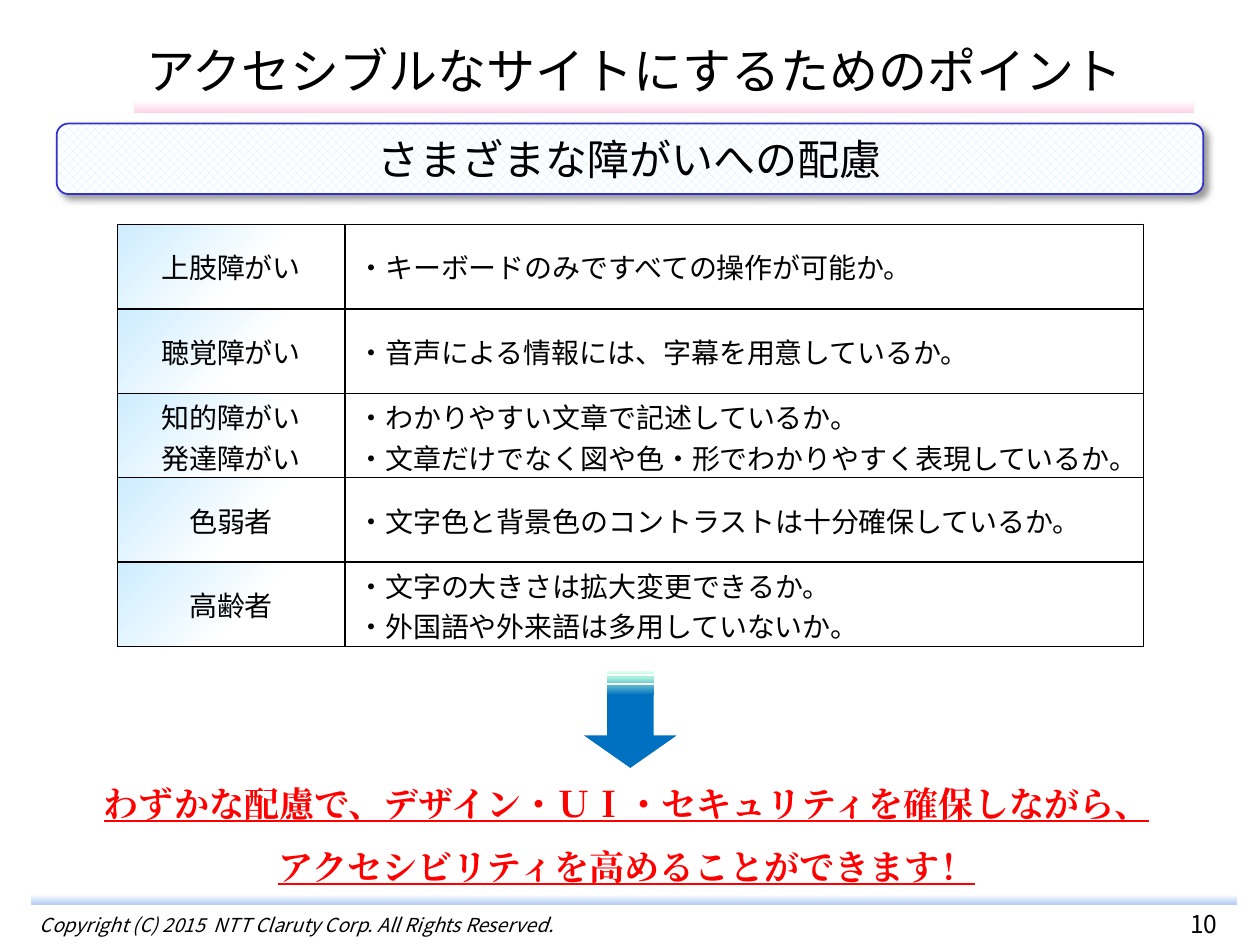
from dataclasses import dataclass
from typing import NamedTuple

from lxml.etree import SubElement
from pptx import Presentation
from pptx.dml.color import RGBColor as RGB
from pptx.enum.dml import MSO_PATTERN as Pattern
from pptx.enum.shapes import MSO_SHAPE as Shape
from pptx.enum.text import MSO_ANCHOR as Anchor, PP_ALIGN as Align
from pptx.oxml import parse_xml
from pptx.oxml.ns import nsdecls, qn
from pptx.util import Pt


@dataclass(frozen=True)
class Theme:
    """Colours, fonts and type sizes of the slide."""
    sans: str = "Noto Sans CJK JP"
    serif: str = "Times New Roman"
    ink: str = "000000"
    paper: str = "FFFFFF"
    accent: str = "FF0000"
    sky: str = "CCECFF"
    pink: str = "FCD4E9"
    blue: str = "B8CDF4"
    frame: str = "3333CC"
    title: float = 28
    banner: float = 24
    message: float = 20
    body: float = 16
    number: float = 14
    footer: float = 11


class Box(NamedTuple):
    """Position and size in points."""
    x: float
    y: float
    w: float
    h: float

    def emu(self) -> tuple:
        return tuple(Pt(v) for v in self)


class Style(NamedTuple):
    """Character and paragraph formatting."""
    size: float
    font: str = Theme.sans
    color: str = Theme.ink
    bold: bool = False
    italic: bool = False
    underline: bool = False
    align: Align = Align.LEFT
    before: float = 0
    after: float = 0


class Row(NamedTuple):
    """One kind of disability and its check points."""
    labels: tuple
    checks: tuple


T = Theme()
ROWS = (
    Row(("上肢障がい",), ("・キーボードのみですべての操作が可能か。",)),
    Row(("聴覚障がい",), ("・音声による情報には、字幕を用意しているか。",)),
    Row(("知的障がい", "発達障がい"),
        ("・わかりやすい文章で記述しているか。",
         "・文章だけでなく図や色・形でわかりやすく表現しているか。")),
    Row(("色弱者",), ("・文字色と背景色のコントラストは十分確保しているか。",)),
    Row(("高齢者",),
        ("・文字の大きさは拡大変更できるか。", "・外国語や外来語は多用していないか。")),
)
COLUMNS = (130, 456.5)
ROW_HEIGHT = 48.24


def write(tf, lines: tuple, style: Style, anchor: Anchor = Anchor.TOP) -> None:
    """Write one paragraph per line into a text frame."""
    tf.word_wrap = True
    tf.vertical_anchor = anchor
    for i, line in enumerate(lines):
        p = tf.add_paragraph() if i else tf.paragraphs[0]
        p.alignment = style.align
        p.space_before = Pt(style.before if i else 0)
        p.space_after = Pt(style.after)
        r = p.add_run()
        r.text = line
        f = r.font
        f.size, f.name = Pt(style.size), style.font
        f.bold, f.italic, f.underline = style.bold, style.italic, style.underline
        f.color.rgb = RGB.from_string(style.color)
        SubElement(r._r.get_or_add_rPr(), qn("a:ea")).set("typeface", style.font)


def add_text(s, box: Box, lines: tuple, style: Style,
             anchor: Anchor = Anchor.TOP, inset: float = 3.6) -> None:
    """Add a text box."""
    tf = s.shapes.add_textbox(*box.emu()).text_frame
    tf.margin_top = tf.margin_bottom = Pt(inset)
    write(tf, lines, style, anchor)


def set_gradient(obj, parent, stops: tuple, angle: int) -> None:
    """Fill a shape or a cell with a linear gradient."""
    obj.fill.solid()
    marks = "".join(f'<a:gs pos="{pos * 1000}"><a:srgbClr val="{color}"/></a:gs>'
                    for pos, color in stops)
    gradient = parse_xml(
        f'<a:gradFill rotWithShape="1" {nsdecls("a")}><a:gsLst>{marks}</a:gsLst>'
        f'<a:lin ang="{angle * 60000}" scaled="0"/></a:gradFill>')
    parent.replace(parent.find(qn("a:solidFill")), gradient)


def add_shape(s, kind: Shape, box: Box):
    """Add a preset shape without line or shadow."""
    sp = s.shapes.add_shape(kind, *box.emu())
    sp.shadow.inherit = False
    sp.line.fill.background()
    return sp


def add_bar(s, box: Box, color: str) -> None:
    """Add a rule that fades in from the paper colour."""
    sp = add_shape(s, Shape.RECTANGLE, box)
    set_gradient(sp, sp._element.spPr, ((0, T.paper), (100, color)), 90)


def add_banner(s, box: Box, text: str) -> None:
    """Add the patterned subtitle panel with its soft shadow."""
    sp = add_shape(s, Shape.ROUNDED_RECTANGLE, box)
    sp.fill.patterned()
    sp.fill.pattern = Pattern.PERCENT_50
    sp.fill.fore_color.rgb = RGB.from_string(T.sky)
    sp.fill.back_color.rgb = RGB.from_string(T.paper)
    sp.line.color.rgb = RGB.from_string(T.frame)
    sp.line.width = Pt(1)
    sp._element.spPr.find(qn("a:effectLst")).append(parse_xml(
        f'<a:outerShdw {nsdecls("a")} blurRad="{Pt(4)}" dist="{Pt(3)}" dir="2700000" '
        f'algn="tl" rotWithShape="0"><a:srgbClr val="{T.ink}"><a:alpha val="40000"/>'
        '</a:srgbClr></a:outerShdw>'))
    write(sp.text_frame, (text,), Style(T.banner, align=Align.CENTER), Anchor.MIDDLE)


def set_cell(cell, lines: tuple, align: Align) -> None:
    """Write a cell and draw its borders."""
    cell.margin_top = Pt(1.6 if len(lines) > 1 else 0)
    cell.margin_bottom = 0
    cell.vertical_anchor = Anchor.MIDDLE
    write(cell.text_frame, lines, Style(T.body, align=align), Anchor.MIDDLE)
    tcPr = cell._tc.get_or_add_tcPr()
    for side in "LRTB":
        tcPr.append(parse_xml(
            f'<a:ln{side} {nsdecls("a")} w="{Pt(1)}"><a:solidFill>'
            f'<a:srgbClr val="{T.ink}"/></a:solidFill></a:ln{side}>'))


def add_checks(s, x: float, y: float) -> None:
    """Add the table of check points."""
    box = Box(x, y, sum(COLUMNS), ROW_HEIGHT * len(ROWS))
    table = s.shapes.add_table(len(ROWS), len(COLUMNS), *box.emu()).table
    table.first_row = table.horz_banding = False
    for column, width in zip(table.columns, COLUMNS):
        column.width = Pt(width)
    for i, row in enumerate(ROWS):
        table.rows[i].height = Pt(ROW_HEIGHT)
        label, check = table.cell(i, 0), table.cell(i, 1)
        set_cell(label, row.labels, Align.CENTER)
        set_gradient(label, label._tc.tcPr,
                     ((0, T.sky), (58, T.paper), (100, T.paper)), 45)
        set_cell(check, row.checks, Align.LEFT)
        check.fill.solid()
        check.fill.fore_color.rgb = RGB.from_string(T.paper)


def add_arrow(s, box: Box) -> None:
    """Add the striped arrow that points down."""
    sp = add_shape(s, Shape.STRIPED_RIGHT_ARROW, box)
    sp.rotation = 90
    sp.adjustments[0], sp.adjustments[1] = 0.5, 0.35
    set_gradient(sp, sp._element.spPr,
                 ((75, "0070C0"), (95, "BAFFDE"), (100, "DDFFEE")), 180)


def main() -> None:
    """Build the slide and save it."""
    prs = Presentation()
    prs.slide_width, prs.slide_height = Pt(720), Pt(540)
    s = prs.slides.add_slide(prs.slide_layouts[5])
    add_bar(s, Box(18, 511.2, 689, 5.6), T.blue)
    add_bar(s, Box(76.4, 57.6, 606.2, 7), T.pink)
    title = s.shapes.title
    title.left, title.top, title.width, title.height = Box(76.4, 18.7, 606.2, 42.5).emu()
    write(title.text_frame, ("アクセシブルなサイトにするためのポイント",),
          Style(T.title), Anchor.MIDDLE)
    add_banner(s, Box(32.4, 70.6, 655.2, 40.3), "さまざまな障がいへの配慮")
    add_checks(s, 67, 128.3)
    add_arrow(s, Box(332.5, 384.5, 55.4, 53.3))
    add_text(s, Box(51.8, 443.5, 612.7, 67.7),
             ("わずかな配慮で、デザイン・ＵＩ・セキュリティを確保しながら、",
              "アクセシビリティを高めることができます！"),
             Style(T.message, T.serif, T.accent, bold=True, underline=True,
                   align=Align.CENTER, before=5, after=7))
    add_text(s, Box(15.8, 521.3, 436.3, 14.4),
             ("Copyright (C) 2015  NTT Claruty Corp. All Rights Reserved.",),
             Style(T.footer, italic=True), inset=0.7)
    add_text(s, Box(619.2, 504, 137.5, 36), ("10",),
             Style(T.number, align=Align.CENTER), Anchor.BOTTOM)
    prs.save("out.pptx")


if __name__ == "__main__":
    main()
